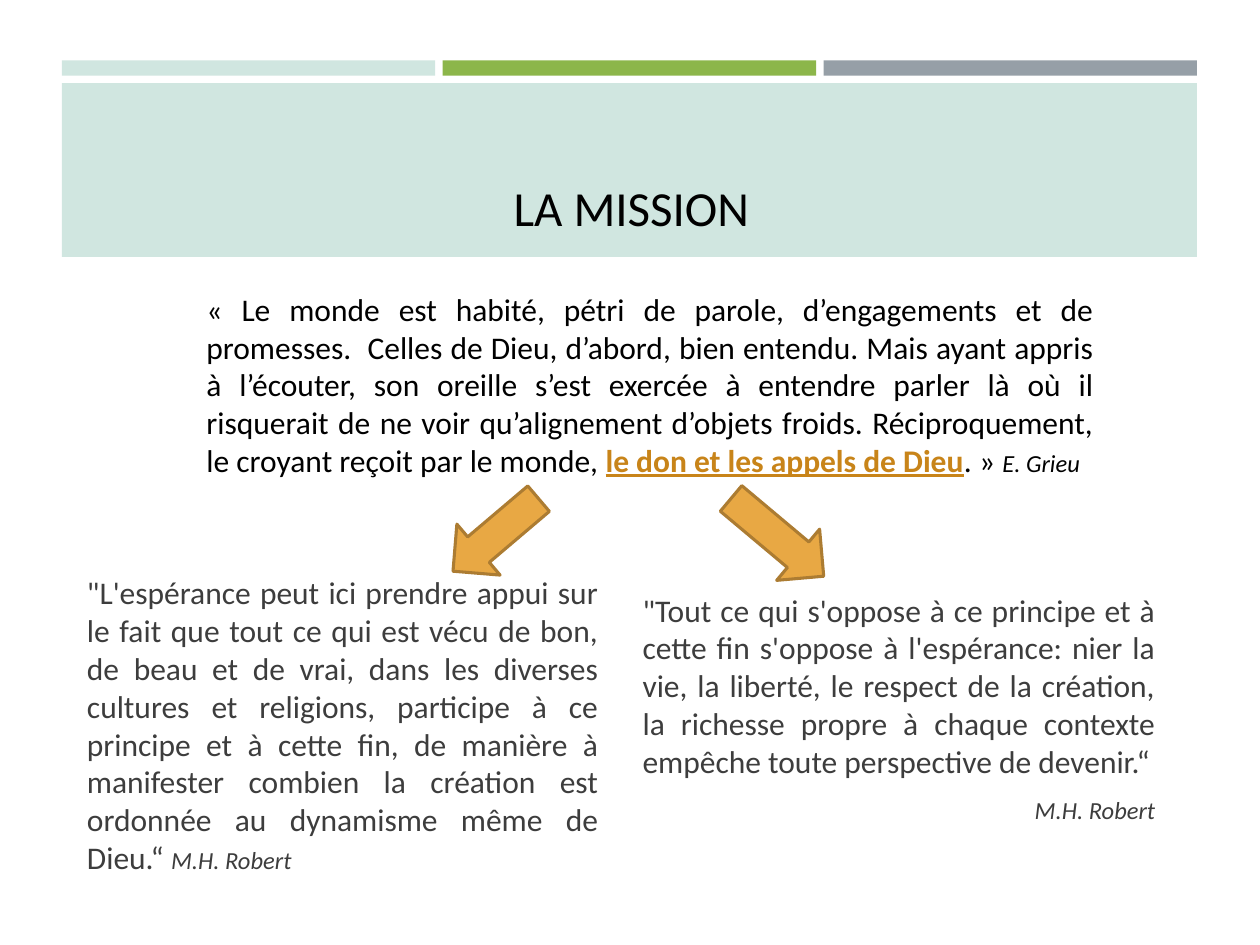
from dataclasses import dataclass, field

from lxml.etree import SubElement
from pptx import Presentation
from pptx.dml.color import RGBColor
from pptx.enum.shapes import MSO_SHAPE as Shape
from pptx.enum.text import MSO_ANCHOR as Anchor, MSO_AUTO_SIZE as AutoSize, PP_ALIGN as Align
from pptx.oxml.ns import qn
from pptx.util import Emu, Inches, Pt

SLIDE_WIDTH, SLIDE_HEIGHT = Inches(10), Inches(7.5)
COLUMNS, ROWS = 100, 75
COLORS = {
    "mint": "D0E6E0", "green": "8CB64A", "slate": "969FA7",
    "amber": "E8A844", "brown": "AC7C32", "accent": "C88419",
    "black": "000000", "gray": "3D3D3D",
}


@dataclass(frozen=True)
class Area:
    column: float
    row: float
    columns: float
    rows: float


@dataclass(frozen=True)
class Span:
    text: str
    color: str
    size: float = 18
    style: dict = field(default_factory=dict)


@dataclass(frozen=True)
class Para:
    spans: list
    format: dict


@dataclass(frozen=True)
class Arrow:
    area: Area
    rotation: float


def color(name: str) -> RGBColor:
    return RGBColor.from_string(COLORS[name])


def edges(area: Area) -> dict:
    return {
        "left": Emu(round(SLIDE_WIDTH * area.column / COLUMNS)),
        "top": Emu(round(SLIDE_HEIGHT * area.row / ROWS)),
        "width": Emu(round(SLIDE_WIDTH * area.columns / COLUMNS)),
        "height": Emu(round(SLIDE_HEIGHT * area.rows / ROWS)),
    }


def assign(target, values: dict) -> None:
    for name, value in values.items():
        setattr(target, name, value)


def draw_shape(page, kind, area: Area, fill: str):
    shape = page.shapes.add_shape(kind, **edges(area))
    shape.shadow.inherit = False
    shape.fill.solid()
    shape.fill.fore_color.rgb = color(fill)
    shape.line.fill.background()
    return shape


def draw_arrow(page, arrow: Arrow) -> None:
    shape = draw_shape(page, Shape.RIGHT_ARROW, arrow.area, "amber")
    shape.rotation = arrow.rotation
    shape.line.color.rgb = color("brown")
    shape.line.width = Pt(1.75)


def write(box, area: Area, anchor, paras: list) -> None:
    assign(box, edges(area))
    frame = box.text_frame
    assign(frame, {"word_wrap": True, "auto_size": AutoSize.NONE, "vertical_anchor": anchor})
    for index, para in enumerate(paras):
        paragraph = frame.paragraphs[0] if index == 0 else frame.add_paragraph()
        properties = paragraph._p.get_or_add_pPr()
        properties.set("marL", "0")
        properties.set("indent", "0")
        SubElement(properties, qn("a:buNone"))
        assign(paragraph, {"space_before": Pt(0), "space_after": Pt(0), **para.format})
        for span in para.spans:
            run = paragraph.add_run()
            run.text = span.text
            assign(run.font, {"name": "Calibri", "size": Pt(span.size), **span.style})
            run.font.color.rgb = color(span.color)


ITALIC = {"italic": True}
STRESSED = {"bold": True, "underline": True}
JUSTIFIED = {"alignment": Align.JUSTIFY}
BODY = {**JUSTIFIED, "space_after": Pt(6)}
SIGNATURE = {"alignment": Align.RIGHT, "space_before": Pt(2.8), "space_after": Pt(6)}
AUTHOR = Span("M.H. Robert", "gray", 14, ITALIC)

TITLE = [Para([Span("LA MISSION", "black", 28)], {"alignment": Align.CENTER})]
QUOTE = [Para([
    Span("« Le monde est habité, pétri de parole, d’engagements et de promesses.  Celles de Dieu, "
         "d’abord, bien entendu. Mais ayant appris à l’écouter, son oreille s’est exercée à "
         "entendre parler là où il risquerait de ne voir qu’alignement d’objets froids. "
         "Réciproquement, le croyant reçoit par le monde, ", "black"),
    Span("le don et les appels de Dieu", "accent", style=STRESSED),
    Span(". » ", "black"),
    Span("E. Grieu", "black", 14, ITALIC),
], JUSTIFIED)]
HOPE = [Para([
    Span("\"L'espérance peut ici prendre appui sur le fait que tout ce qui est vécu de bon, de beau "
         "et de vrai, dans les diverses cultures et religions, participe à ce principe et à cette "
         "fin, de manière à manifester combien la création est ordonnée au dynamisme même de "
         "Dieu.“ ", "gray"),
    AUTHOR,
], BODY)]
REFUSAL = [
    Para([Span("\"Tout ce qui s'oppose à ce principe et à cette fin s'oppose à l'espérance: nier la "
               "vie, la liberté, le respect de la création, la richesse propre à chaque contexte "
               "empêche toute perspective de devenir.“", "gray")], BODY),
    Para([AUTHOR], SIGNATURE),
]
ARROWS = [
    Arrow(Area(56.9, 40, 9.6, 5.3), 40),
    Arrow(Area(34.9, 39.8, 8.9, 5.3), 139.7),
]
BANNER = Area(4.9, 6.6, 90.1, 13.8)
STRIPES = ["mint", "green", "slate"]
STRIPE_GAP = 0.6


def draw_banner(page) -> None:
    width = (BANNER.columns - STRIPE_GAP * (len(STRIPES) - 1)) / len(STRIPES)
    for index, name in enumerate(STRIPES):
        column = BANNER.column + index * (width + STRIPE_GAP)
        draw_shape(page, Shape.RECTANGLE, Area(column, 4.8, width, 1.2), name)
    draw_shape(page, Shape.RECTANGLE, BANNER, "mint")


def main() -> None:
    deck = Presentation()
    assign(deck, {"slide_width": SLIDE_WIDTH, "slide_height": SLIDE_HEIGHT})
    page = deck.slides.add_slide(deck.slide_layouts[3])
    title, left_body, right_body = page.placeholders
    draw_banner(page)
    for box in (title, left_body, right_body):
        page.shapes._spTree.append(box._element)
    write(title, Area(6.4, 7.5, 87.4, 11.8), Anchor.BOTTOM, TITLE)
    write(left_body, Area(5.9, 43, 42.6, 29), Anchor.MIDDLE, HOPE)
    write(right_body, Area(50, 43, 42.7, 26.3), Anchor.MIDDLE, REFUSAL)
    quote_area = Area(15.4, 22.5, 72.4, 16.2)
    write(page.shapes.add_textbox(**edges(quote_area)), quote_area, Anchor.TOP, QUOTE)
    for arrow in ARROWS:
        draw_arrow(page, arrow)
    deck.save("out.pptx")


if __name__ == "__main__":
    main()
